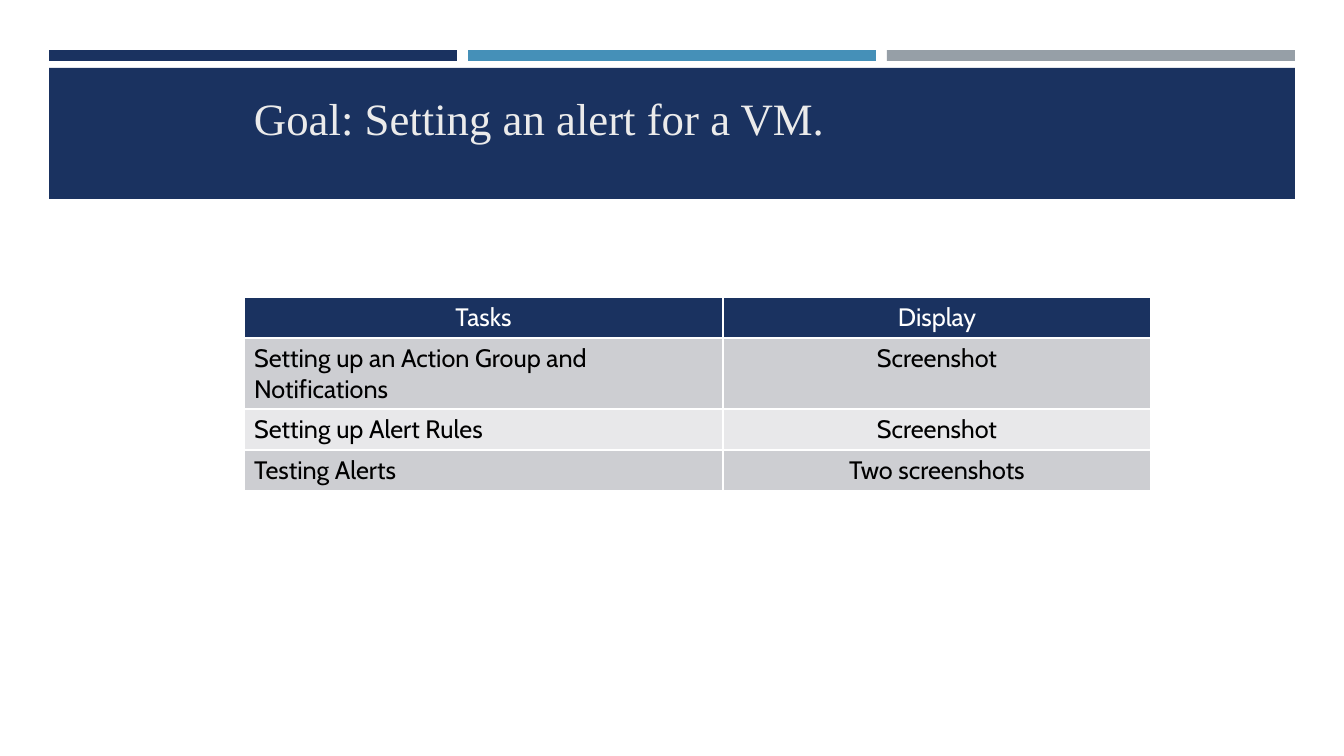
from dataclasses import dataclass

from lxml.etree import SubElement
from pptx import Presentation
from pptx.dml.color import RGBColor
from pptx.enum.shapes import MSO_SHAPE as Shape
from pptx.enum.text import MSO_ANCHOR as Anchor, PP_ALIGN as Align
from pptx.oxml.ns import qn
from pptx.slide import Slide
from pptx.table import _Cell as Cell
from pptx.text.text import TextFrame
from pptx.util import Emu, Pt

SLIDE_WIDTH, SLIDE_HEIGHT = 1344, 756
EMU_PER_PX = 12192000 / SLIDE_WIDTH

NAVY = RGBColor(0x1A, 0x32, 0x60)
BLUE = RGBColor(0x45, 0x90, 0xB8)
GRAY = RGBColor(0x96, 0x9F, 0xA7)
OFF_WHITE = RGBColor(0xEB, 0xEB, 0xEB)
WHITE = RGBColor(0xFF, 0xFF, 0xFF)
BLACK = RGBColor(0x00, 0x00, 0x00)
DARK_BAND = RGBColor(0xCD, 0xCE, 0xD2)
LIGHT_BAND = RGBColor(0xE8, 0xE8, 0xEA)


@dataclass(frozen=True)
class Box:
    left: int
    top: int
    width: int
    height: int
    fill: RGBColor | None = None

    def emu(self) -> tuple[Emu, ...]:
        return tuple(map(px, (self.left, self.top, self.width, self.height)))


@dataclass(frozen=True)
class Row:
    task: str
    display: str
    height: int


BAR_WIDTH, BAR_STEP = 408, 419
BARS = [
    Box(49 + index * BAR_STEP, 50, BAR_WIDTH, 11, color)
    for index, color in enumerate((NAVY, BLUE, GRAY))
]
BANNER = Box(49, 68, 1246, 131, NAVY)
TITLE = Box(244, 91, 907, 52)
TABLE = Box(244, 297, 907, 194)
COLUMN_WIDTHS = (479, 428)
ROWS = [
    Row("Tasks", "Display", 41),
    Row("Setting up an Action Group and Notifications", "Screenshot", 71),
    Row("Setting up Alert Rules", "Screenshot", 41),
    Row("Testing Alerts", "Two screenshots", 41),
]


def px(length: int) -> Emu:
    return Emu(round(length * EMU_PER_PX))


def write(frame: TextFrame, text: str, *, font: str = "Cabin", size: int = 18,
          color: RGBColor = BLACK, align: Align = Align.LEFT) -> None:
    paragraph = frame.paragraphs[0]
    paragraph.alignment = align
    run = paragraph.add_run()
    run.text = text
    run.font.name = font
    run.font.size = Pt(size)
    run.font.color.rgb = color


def draw_box(slide: Slide, box: Box) -> None:
    shape = slide.shapes.add_shape(Shape.RECTANGLE, *box.emu())
    shape.shadow.inherit = False
    shape.fill.solid()
    shape.fill.fore_color.rgb = box.fill
    shape.line.fill.background()


def draw_title(slide: Slide) -> None:
    frame = slide.shapes.add_textbox(*TITLE.emu()).text_frame
    frame.word_wrap = True
    frame.vertical_anchor = Anchor.TOP
    frame.margin_left = frame.margin_right = px(10)
    frame.margin_top = frame.margin_bottom = 0
    write(frame, "Goal: Setting an alert for a VM.",
          font="Times New Roman", size=32, color=OFF_WHITE)


def add_borders(cell: Cell) -> None:
    properties = cell._tc.get_or_add_tcPr()
    for index, side in enumerate(("a:lnL", "a:lnR", "a:lnT", "a:lnB")):
        line = properties.makeelement(qn(side), {"w": str(Pt(1))})
        fill = SubElement(line, qn("a:solidFill"))
        SubElement(fill, qn("a:srgbClr"), val=str(WHITE))
        properties.insert(index, line)


def draw_table(slide: Slide) -> None:
    table = slide.shapes.add_table(
        len(ROWS), len(COLUMN_WIDTHS), *TABLE.emu()).table
    for column, width in zip(table.columns, COLUMN_WIDTHS):
        column.width = px(width)
    for row_index, row in enumerate(ROWS):
        table.rows[row_index].height = px(row.height)
        header = row_index == 0
        band = DARK_BAND if row_index % 2 else LIGHT_BAND
        for column_index, text in enumerate((row.task, row.display)):
            cell = table.cell(row_index, column_index)
            cell.fill.solid()
            cell.fill.fore_color.rgb = NAVY if header else band
            add_borders(cell)
            centered = header or column_index == 1
            write(cell.text_frame, text, color=WHITE if header else BLACK,
                  align=Align.CENTER if centered else Align.LEFT)
            cell.text_frame.paragraphs[0].runs[0].font.bold = False


def main() -> None:
    presentation = Presentation()
    presentation.slide_width = px(SLIDE_WIDTH)
    presentation.slide_height = px(SLIDE_HEIGHT)
    slide = presentation.slides.add_slide(presentation.slide_layouts[6])
    for box in (*BARS, BANNER):
        draw_box(slide, box)
    draw_title(slide)
    draw_table(slide)
    presentation.save("out.pptx")


if __name__ == "__main__":
    main()
